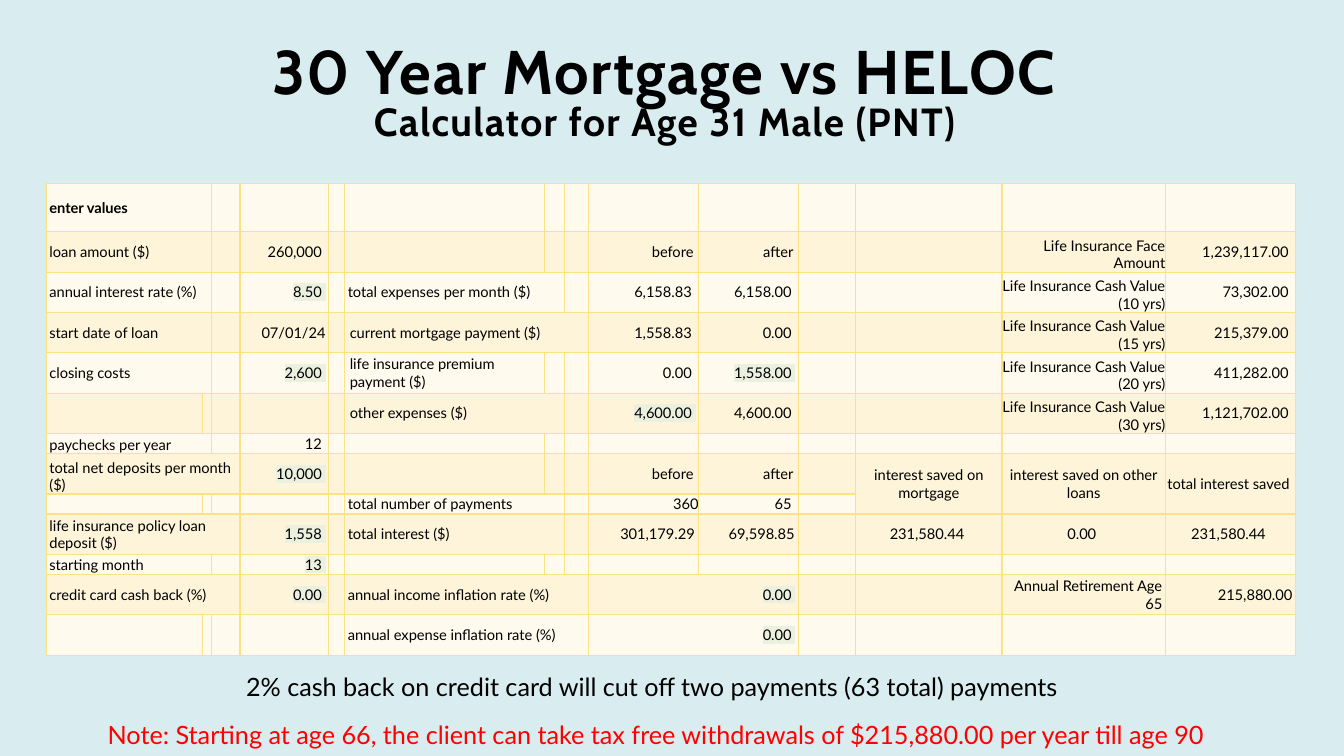
from lxml.etree import SubElement
from pptx import Presentation
from pptx.dml.color import RGBColor
from pptx.enum.text import MSO_ANCHOR, MSO_AUTO_SIZE, PP_ALIGN
from pptx.oxml import parse_xml
from pptx.oxml.ns import nsdecls, qn
from pptx.util import Inches, Pt

COLORS = {
    "background": "D9ECEF",
    "text": "000000",
    "note": "FF0000",
    "border": "FBE284",
    "light row": "FEFAED",
    "dark row": "FDF4D9",
    "input": "EBF1DE",
}
COLUMN_WIDTHS = [1.55, 0.09, 0.28, 0.88, 0.16, 1.98, 0.2, 0.24, 1.09, 0.99,
                 0.57, 1.45, 1.62, 1.29]
ROW_HEIGHTS = [0.48] + [0.4] * 5 + [0.2, 0.4] * 2 + [0.2, 0.4, 0.4]

# Cell style: alignment, anchor, left inset, right inset
LEFT, RIGHT, CENTER = PP_ALIGN.LEFT, PP_ALIGN.RIGHT, PP_ALIGN.CENTER
MIDDLE, BOTTOM = MSO_ANCHOR.MIDDLE, MSO_ANCHOR.BOTTOM
CELL_STYLES = {
    "label": (LEFT, MIDDLE, 0.03, 0),
    "low label": (LEFT, BOTTOM, 0.03, 0),
    "sublabel": (LEFT, MIDDLE, 0.05, 0),
    "value": (RIGHT, MIDDLE, 0, 0.03),
    "input": (RIGHT, MIDDLE, 0, 0.03),
    "heading": (RIGHT, MIDDLE, 0, 0.05),
    "total": (RIGHT, MIDDLE, 0, 0),
    "policy": (RIGHT, BOTTOM, 0, 0),
    "savings": (CENTER, MIDDLE, 0, 0),
}

# For each row: column, text, style, then columns and rows spanned
CALCULATOR = [
    [(0, "enter values", "label", 2)],
    [(0, "loan amount ($)", "label", 2), (3, "260,000 ", "value"),
     (8, "before", "heading"), (9, "after", "heading"),
     (12, "Life Insurance Face Amount", "policy"), (13, "1,239,117.00 ", "value")],
    [(0, "annual interest rate (%)", "label", 2), (3, "8.50 ", "input"),
     (5, "total expenses per month ($)", "label", 2),
     (8, "6,158.83 ", "value"), (9, "6,158.00 ", "value"),
     (12, "Life Insurance Cash Value (10 yrs)", "policy"), (13, "73,302.00 ", "value")],
    [(0, "start date of loan", "label", 2), (3, "07/01/24", "value"),
     (5, "current mortgage payment ($)", "sublabel", 3),
     (8, "1,558.83 ", "value"), (9, "0.00 ", "value"),
     (12, "Life Insurance Cash Value (15 yrs)", "policy"), (13, "215,379.00 ", "value")],
    [(0, "closing costs", "label", 2), (3, "2,600 ", "input"),
     (5, "life insurance premium payment ($)", "sublabel"),
     (8, "0.00 ", "value"), (9, "1,558.00 ", "input"),
     (12, "Life Insurance Cash Value (20 yrs)", "policy"), (13, "411,282.00 ", "value")],
    [(5, "other expenses ($)", "sublabel", 2),
     (8, "4,600.00 ", "input"), (9, "4,600.00 ", "value"),
     (12, "Life Insurance Cash Value (30 yrs)", "policy"), (13, "1,121,702.00 ", "value")],
    [(0, "paychecks per year", "low label", 2), (3, "12 ", "value")],
    [(0, "total net deposits per month ($)", "low label", 3), (3, "10,000 ", "input"),
     (8, "before", "heading"), (9, "after", "heading"),
     (11, "interest saved on mortgage", "savings", 1, 2),
     (12, "interest saved on other loans", "savings", 1, 2),
     (13, "total interest saved ", "savings", 1, 2)],
    [(5, "total number of payments", "label", 2),
     (8, "360", "total"), (9, "65 ", "value")],
    [(0, "life insurance policy loan deposit ($)", "label", 3), (3, "1,558 ", "input"),
     (5, "total interest ($)", "label", 2),
     (8, "301,179.29 ", "total"), (9, "69,598.85 ", "total"),
     (11, "231,580.44 ", "savings"), (12, "0.00 ", "savings"),
     (13, "231,580.44 ", "savings")],
    [(0, "starting month", "label", 2), (3, "13 ", "input")],
    [(0, "credit card cash back (%)", "label", 3), (3, "0.00 ", "input"),
     (5, "annual income inflation rate (%)", "label", 3), (8, "0.00 ", "input", 2),
     (12, "Annual Retirement Age 65", "value"), (13, "215,880.00", "value")],
    [(5, "annual expense inflation rate (%)", "label", 3), (8, "0.00 ", "input", 2)],
]


class SlideBuilder:
    heading_font, body_font, cell_size = "Cabin", "Lato", 10.5

    def __init__(self, presentation):
        self.slide = presentation.slides.add_slide(presentation.slide_layouts[5])
        fill = self.slide.background.fill
        fill.solid()
        fill.fore_color.rgb = RGBColor.from_string(COLORS["background"])

    def format_run(self, run, font, size, color="text", bold=False):
        run.font.name = font
        run.font.size = Pt(size)
        run.font.bold = bold
        run.font.color.rgb = RGBColor.from_string(COLORS[color])

    def title(self, text, sizes, left, top, width, height):
        heading = self.slide.shapes.title
        heading.left, heading.top = Inches(left), Inches(top)
        heading.width, heading.height = Inches(width), Inches(height)
        frame = heading.text_frame
        frame.text = text
        frame.auto_size = MSO_AUTO_SIZE.NONE
        frame.vertical_anchor = BOTTOM
        frame.margin_left = frame.margin_right = 0
        frame.margin_top = frame.margin_bottom = 0
        lines = frame.paragraphs[0]
        lines.alignment = CENTER
        lines.line_spacing = 0.8
        for run, size in zip(lines.runs, sizes):
            self.format_run(run, self.heading_font, size, bold=True)
            run.font._element.set("spc", "100")

    def remark(self, text, left, top, width, height, color="text", inset=0.1):
        box = self.slide.shapes.add_textbox(
            Inches(left), Inches(top), Inches(width), Inches(height))
        frame = box.text_frame
        frame.word_wrap = True
        frame.auto_size = MSO_AUTO_SIZE.SHAPE_TO_FIT_TEXT
        frame.margin_left = Inches(inset)
        frame.text = text
        self.format_run(frame.paragraphs[0].runs[0], self.body_font, 18, color)

    def table(self, rows, left, top):
        grid = self.slide.shapes.add_table(
            len(ROW_HEIGHTS), len(COLUMN_WIDTHS), Inches(left), Inches(top),
            Inches(sum(COLUMN_WIDTHS)), Inches(sum(ROW_HEIGHTS))).table
        grid.first_row = grid.horz_banding = False
        for column, width in zip(grid.columns, COLUMN_WIDTHS):
            column.width = Inches(width)
        for index, height in enumerate(ROW_HEIGHTS):
            grid.rows[index].height = Inches(height)
            for cell in grid.rows[index].cells:
                self.blank_cell(cell, "dark row" if index % 2 else "light row")
        for index, entries in enumerate(rows):
            for column, text, style, *span in entries:
                columns, depth = (span + [1, 1][len(span):])
                cell = grid.cell(index, column)
                if span:
                    cell.merge(grid.cell(index + depth - 1, column + columns - 1))
                self.fill_cell(cell, text, style, bold=index == 0)

    def blank_cell(self, cell, color):
        cell.margin_left = cell.margin_right = 0
        cell.margin_top = cell.margin_bottom = 0
        cell.fill.solid()
        cell.fill.fore_color.rgb = RGBColor.from_string(COLORS[color])
        properties = cell._tc.get_or_add_tcPr()
        for position, side in enumerate(("lnL", "lnR", "lnT", "lnB")):
            properties.insert(position, parse_xml(
                f'<a:{side} {nsdecls("a")} w="12700"><a:solidFill>'
                f'<a:srgbClr val="{COLORS["border"]}"/></a:solidFill></a:{side}>'))
        # Small end mark, so that empty cells do not stretch the low rows
        end_mark = cell.text_frame.paragraphs[0]._p.get_or_add_endParaRPr()
        end_mark.set("sz", str(int(self.cell_size * 100)))

    def fill_cell(self, cell, text, style, bold):
        alignment, anchor, left, right = CELL_STYLES[style]
        cell.vertical_anchor = anchor
        cell.margin_left, cell.margin_right = Inches(left), Inches(right)
        entry = cell.text_frame.paragraphs[0]
        entry.text = text
        entry.alignment = alignment
        run = entry.runs[0]
        self.format_run(run, self.body_font, self.cell_size, bold=bold)
        if style == "input":
            self.highlight(run)

    def highlight(self, run):
        properties = run.font._element
        mark = SubElement(properties, qn("a:highlight"))
        SubElement(mark, qn("a:srgbClr")).set("val", COLORS["input"])
        properties.find(qn("a:solidFill")).addnext(mark)


def main():
    presentation = Presentation()
    presentation.slide_width, presentation.slide_height = Inches(13.33), Inches(7.5)
    builder = SlideBuilder(presentation)
    builder.title("30 Year Mortgage vs HELOC\vCalculator for Age 31 Male (PNT)",
                  (44, 28), 0.65, 0.11, 11.89, 1.32)
    builder.table(CALCULATOR, 0.46, 1.82)
    builder.remark("Note: Starting at age 66, the client can take tax free withdrawals "
                   "of $215,880.00 per year till age 90", 0.97, 7.09, 12, 0.4, "note")
    builder.remark("2% cash back on credit card will cut off two payments "
                   "(63 total) payments", 1.89, 6.61, 8.98, 0.4, inset=0.55)
    presentation.save("out.pptx")


if __name__ == "__main__":
    main()
